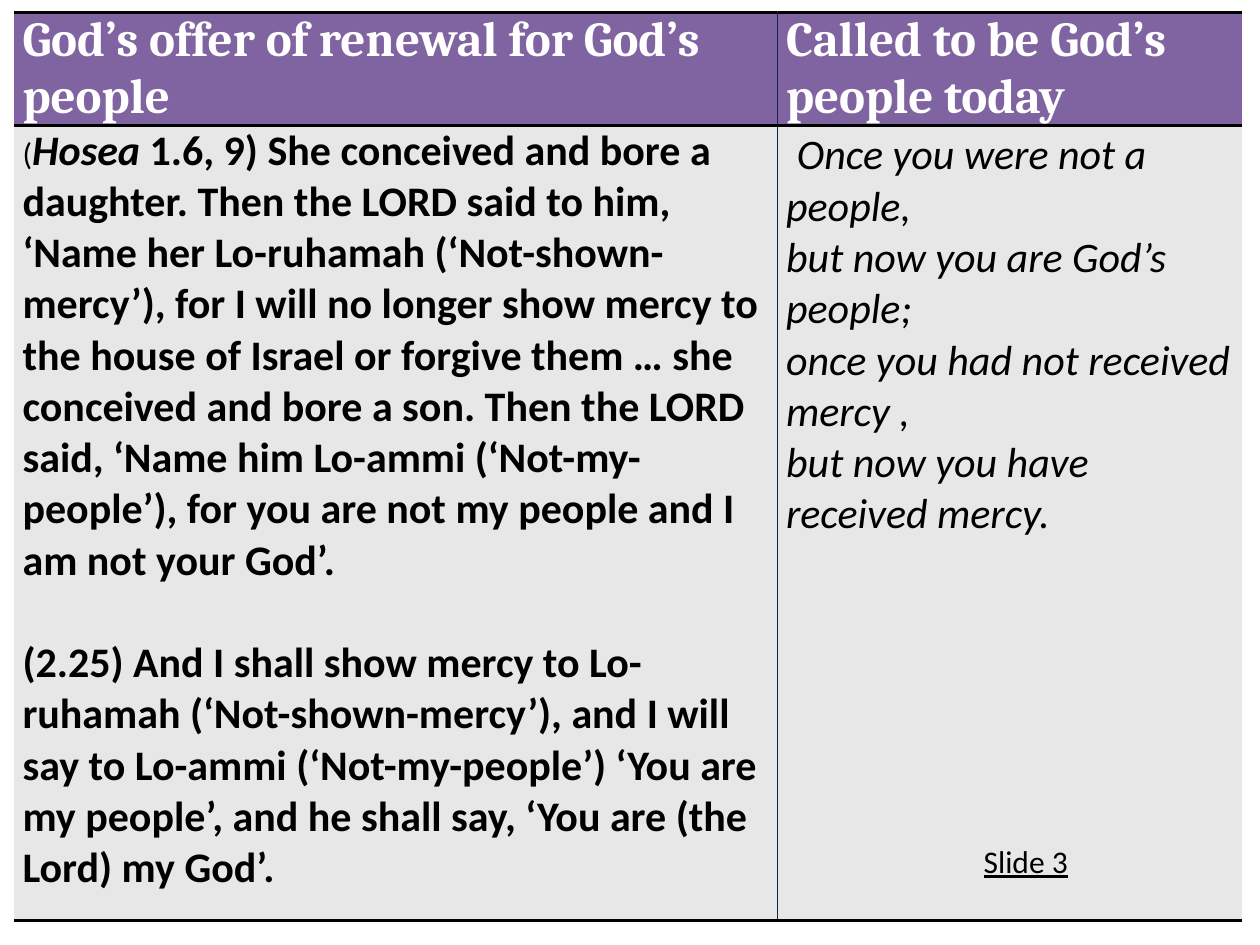
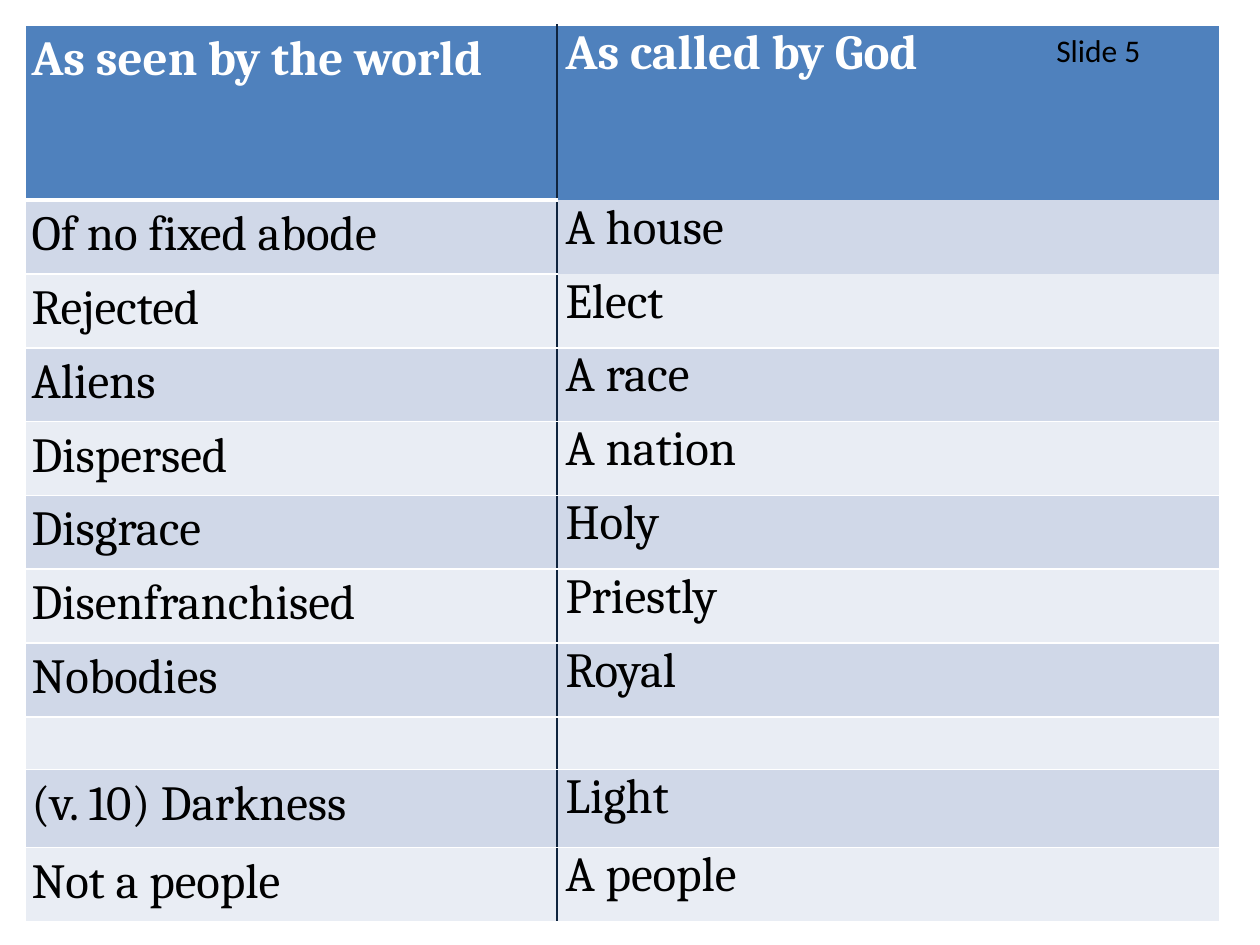
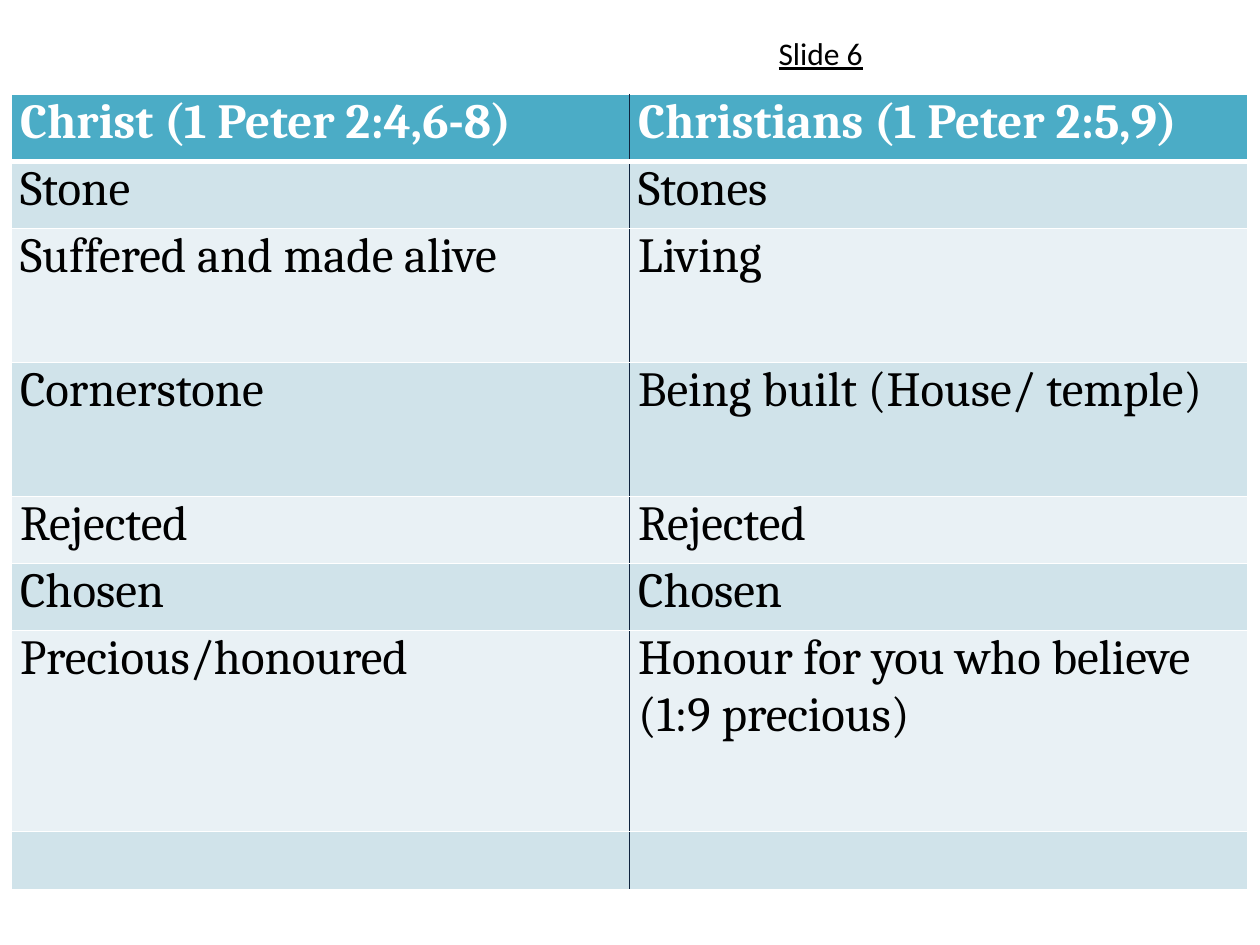
from pptx import Presentation
from pptx.dml.color import RGBColor
from pptx.oxml.ns import qn
from pptx.util import Pt
from lxml.etree import SubElement

HUES = {
    "white": "FFFFFF", "black": "000000", "navy": "0F243E",
    "plum": "8064A2", "grey": "E7E7E7",
    "blue": "4F81BD", "sky": "D0D8E8", "mist": "E9EDF4",
    "teal": "4BACC6", "aqua": "D0E3EA", "ice": "E9F1F5",
}
PLAIN = "{2D5ABB26-0587-4C30-8999-92F81FD0307C}"
SNUG = (5, 0, 5, 0)
EVEN = (3.6, 3.6, 3.6, 3.6)

OFFER = ["God’s offer of renewal for God’s people", "Called to be God’s people today"]
HOSEA = [
    ("(", 18, False, False),
    ("Hosea", 24, True, True),
    (" 1.6, 9) She conceived and bore a daughter. Then the LORD said to him, "
     "‘Name her Lo-ruhamah (‘Not-shown-mercy’), for I will no longer show mercy "
     "to the house of Israel or forgive them … she conceived and bore a son. "
     "Then the LORD said, ‘Name him Lo-ammi (‘Not-my-people’), for you are not "
     "my people and I am not your God’.", 24, True, False),
]
MERCY = ("(2.25) And I shall show mercy to Lo-ruhamah (‘Not-shown-mercy’), and I "
         "will say to Lo-ammi (‘Not-my-people’) ‘You are my people’, and he shall "
         "say, ‘You are (the Lord) my God’.")
ONCE = "Once you were not a people,"
VERSE = [
    "but now you are God’s people;",
    "once you had not received mercy ,",
    "but now you have received mercy.",
]
WORLD = [
    ("As seen by the world", "As called by God"),
    ("Of no fixed abode", "A house"),
    ("Rejected", "Elect"),
    ("Aliens", "A race"),
    ("Dispersed", "A nation"),
    ("Disgrace", "Holy"),
    ("Disenfranchised", "Priestly"),
    ("Nobodies", "Royal"),
    ("", ""),
    ("(v. 10) Darkness", "Light"),
    ("Not a people", "A people"),
]
CHRIST = [
    ("Christ (1 Peter 2:4,6-8)", "Christians (1 Peter 2:5,9)"),
    ("Stone", "Stones"),
    ("Suffered and made alive", "Living"),
    ("Cornerstone", "Being built (House/ temple)"),
    ("Rejected", "Rejected"),
    ("Chosen", "Chosen"),
    ("Precious/honoured", "Honour for you who believe (1:9 precious)"),
    ("", ""),
]


def hue(name):
    return RGBColor.from_string(HUES[name])


def style(font, size, face="Calibri", tint="black", bold=False, slant=False):
    font.size, font.name = Pt(size), face
    font.bold, font.italic = bold, slant
    font.color.rgb = hue(tint)


def edge(cell, side, tint, width):
    line = SubElement(cell._tc.get_or_add_tcPr(), qn("a:ln" + side), w=str(Pt(width)))
    fill = SubElement(line, qn("a:solidFill"))
    SubElement(fill, qn("a:srgbClr"), val=HUES[tint])


def grid(slide, box, cols, rows, fills, rule, sides, pads, bare=()):
    left, top = box
    frame = slide.shapes.add_table(len(rows), len(cols), Pt(left), Pt(top),
                                   Pt(sum(cols)), Pt(sum(rows)))
    table = frame.table
    table._tbl.tblPr.find(qn("a:tableStyleId")).text = PLAIN
    table.first_row = table.horz_banding = False
    for col, width in zip(table.columns, cols):
        col.width = Pt(width)
    tint, thin, thick = rule
    for r, high in enumerate(rows):
        table.rows[r].height = Pt(high)
        for c in range(len(cols)):
            cell = table.cell(r, c)
            for side, outer in (("L", c == 0), ("R", c == len(cols) - 1)):
                if not outer:
                    edge(cell, side, "navy", 1)
                elif sides:
                    edge(cell, side, tint, thin)
            for side, above in (("T", r - 1), ("B", r)):
                if (above, c) not in bare:
                    edge(cell, side, tint, thick if above == 0 else thin)
            cell.fill.solid()
            cell.fill.fore_color.rgb = hue(fills[0] if r == 0 else fills[1 + (r - 1) % 2])
            (cell.margin_left, cell.margin_top,
             cell.margin_right, cell.margin_bottom) = map(Pt, pads[c])
    return table


def write(cell, text, head):
    if text:
        para = cell.text_frame.paragraphs[0]
        para.text = text
        style(para.font, 28, "Cambria", "white" if head else "black", head)


def label(slide, box, text, line=True):
    left, top, width, high = map(Pt, box)
    frame = slide.shapes.add_textbox(left, top, width, high).text_frame
    frame.word_wrap = True
    para = frame.paragraphs[0]
    para.text = text
    style(para.font, 18)
    para.font.underline = line


def offer(slide, box):
    table = grid(slide, box, (436.3, 265.7), (60.5, 454.3), ("plum", "grey", "grey"),
                 ("black", 2, 2), False, (SNUG, SNUG))
    for c, text in enumerate(OFFER):
        write(table.cell(0, c), text, True)
    frame = table.cell(1, 0).text_frame
    para = frame.paragraphs[0]
    for text, size, bold, slant in HOSEA:
        run = para.add_run()
        run.text = text
        style(run.font, size, bold=bold, slant=slant)
    para = frame.add_paragraph()
    para.text = MERCY
    para.space_before = Pt(29.3)
    style(para.font, 24, bold=True)
    frame = table.cell(1, 1).text_frame
    para = frame.paragraphs[0]
    for text, size, face, slant in ((" ", 28, "Cambria", False), (ONCE, 24, "Calibri", True)):
        run = para.add_run()
        run.text = text
        style(run.font, size, face, slant=slant)
    for text in VERSE:
        para = frame.add_paragraph()
        para.text = text
        style(para.font, 24, slant=True)


def pairs(slide, box, cols, rows, texts, fills, pads, bare=()):
    table = grid(slide, box, cols, rows, fills, ("white", 1, 3), True, pads, bare)
    for r, row in enumerate(texts):
        for c, text in enumerate(row):
            write(table.cell(r, c), text, r == 0)


def main():
    deck = Presentation()
    deck.slide_width, deck.slide_height = Pt(720), Pt(540)
    first, second, third = (deck.slides.add_slide(deck.slide_layouts[6]) for _ in range(3))

    offer(first, (7.9, 7.2))
    label(first, (555, 477.4, 115, 29), "Slide 3")

    pairs(second, (14.4, 14.4), (303.8, 378.7), [100] + [42.2] * 7 + [30.2, 44.6, 42.2],
          WORLD, ("blue", "sky", "mist"), (EVEN, SNUG), {(0, 1), (1, 1)})
    label(second, (596.5, 14.4, 101, 29), "Slide 5", False)

    unit = 38.3
    pairs(third, (6.5, 54), (353.2, 353.2),
          [unit * n for n in (1, 1, 2, 2, 1, 1, 3)] + [33.1],
          CHRIST, ("teal", "aqua", "ice"), (SNUG, SNUG))
    label(third, (437.8, 15.8, 206.6, 29), "Slide 6")

    deck.save("out.pptx")


if __name__ == "__main__":
    main()
